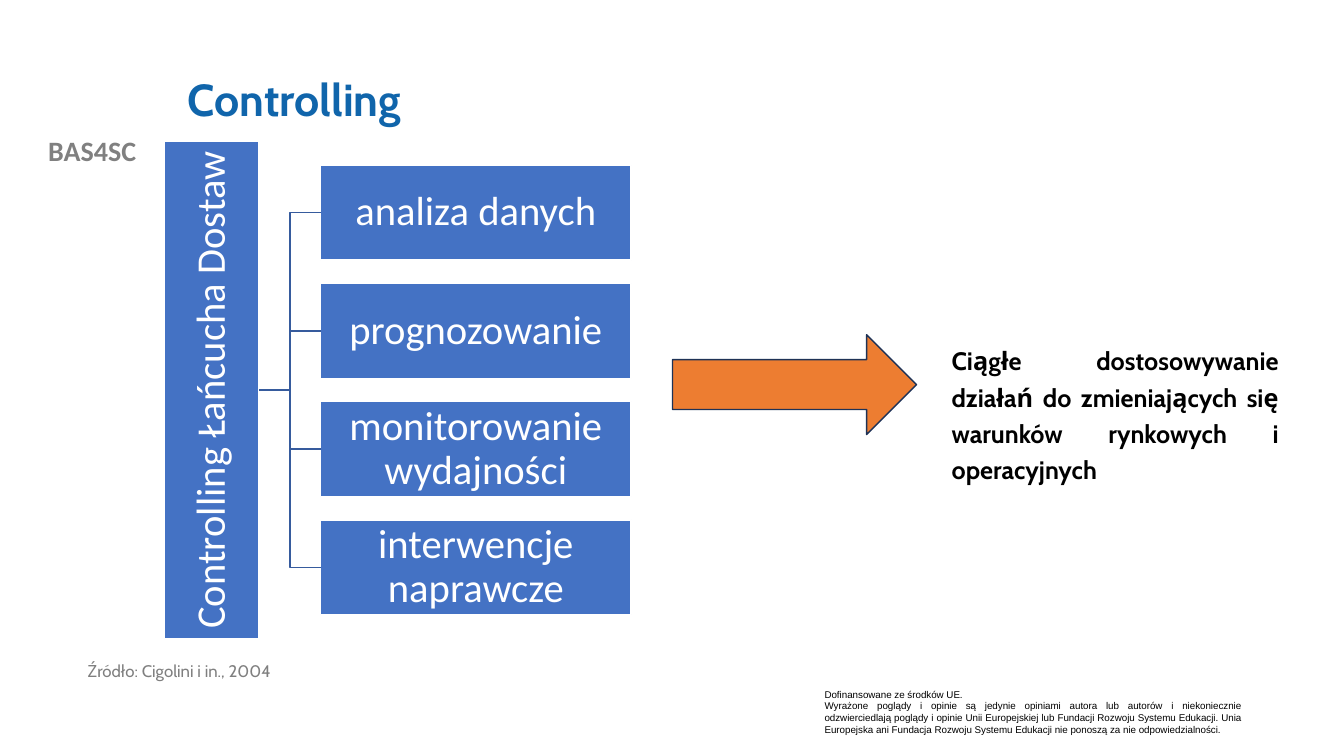
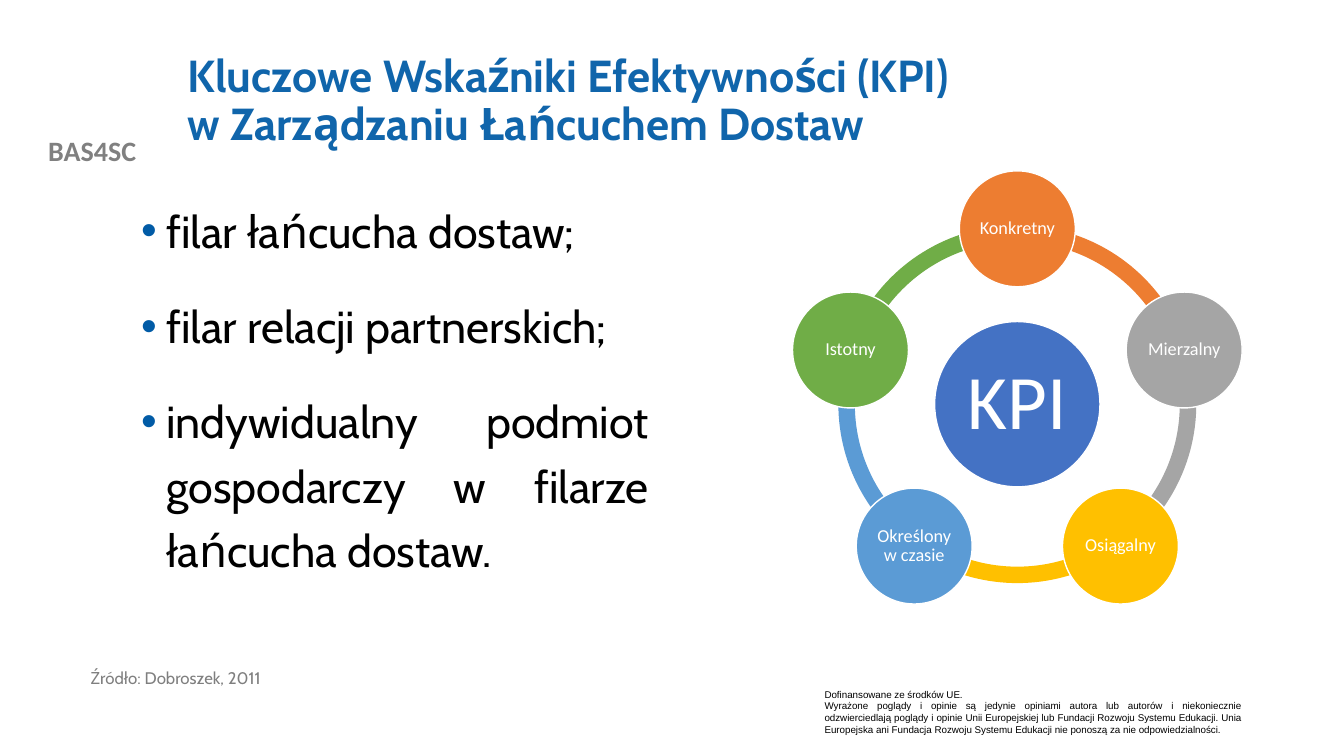
from dataclasses import dataclass
from math import cos, radians, sin

from lxml.etree import SubElement as Sub
from pptx import Presentation
from pptx.dml.color import RGBColor as RGB
from pptx.enum.shapes import MSO_CONNECTOR as Link, MSO_SHAPE as Form
from pptx.enum.text import MSO_ANCHOR as Anchor, MSO_AUTO_SIZE as Fit, PP_ALIGN as Align
from pptx.oxml.ns import qn
from pptx.util import Inches, Pt


@dataclass(frozen=True)
class Theme:
    # Colours
    title: str = "1065AB"
    dot: str = "015BA6"
    text: str = "000000"
    white: str = "FFFFFF"
    gray: str = "808080"
    note: str = "7F7F7F"
    blue: str = "4472C4"
    link: str = "365B9D"
    edge: str = "1E3256"
    orange: str = "ED7D31"
    silver: str = "A5A5A5"
    gold: str = "FFC000"
    sky: str = "5B9BD5"
    green: str = "70AD47"
    # Fonts
    main: str = "Cabin"
    plain: str = "Calibri"
    legal: str = "Arial"
    # Type sizes
    head: int = 32
    box: int = 29
    hub: int = 55
    ball: int = 13
    tag: int = 20
    claim: int = 18
    cite: int = 12
    fine: int = 7


T = Theme()


def write(frame, lines, size, color, font=T.main, bold=False, align=Align.LEFT, pitch=0.9):
    """Fill a text frame, one paragraph a line; a line feed breaks within it."""
    frame.word_wrap = True
    frame.auto_size = Fit.NONE
    for i, line in enumerate(lines):
        para = frame.paragraphs[0] if i == 0 else frame.add_paragraph()
        para.alignment = align
        para.line_spacing = pitch
        para.space_before = Pt(0)
        for j, part in enumerate(line.split("\n")):
            if j:
                para.add_line_break()
            run = para.add_run()
            run.text = part
            run.font.name = font
            run.font.size = Pt(size)
            run.font.bold = bold
            run.font.color.rgb = RGB.from_string(color)


def draw(slide, form, place, fill, edge=None, text=None, size=T.box):
    """Add a filled shape, with a centred label if there is one."""
    shape = slide.shapes.add_shape(form, *map(Inches, place))
    shape.shadow.inherit = False
    shape.fill.solid()
    shape.fill.fore_color.rgb = RGB.from_string(fill)
    if edge:
        shape.line.color.rgb = RGB.from_string(edge)
        shape.line.width = Pt(1)
    else:
        shape.line.fill.background()
    if text:
        frame = shape.text_frame
        frame.vertical_anchor = Anchor.MIDDLE
        frame.margin_left = frame.margin_right = Inches(0.02)
        frame.margin_top = frame.margin_bottom = Inches(0.02)
        write(frame, [text], size, T.white, T.plain, align=Align.CENTER)
    return shape


deck = Presentation()
deck.slide_width, deck.slide_height = Inches(13.33), Inches(7.5)

# Shared layout: title place
base = deck.slide_layouts[1]
head = base.placeholders[0]
head.left, head.top, head.width, head.height = map(Inches, (1.76, 0.4, 10.66, 1.22))
head.text_frame.vertical_anchor = Anchor.MIDDLE

# Slides with their titles
slides = []
for name in (
    "Controlling",
    "Kluczowe Wskaźniki Efektywności (KPI)\nw Zarządzaniu Łańcuchem Dostaw",
):
    slide = deck.slides.add_slide(base)
    write(slide.shapes.title.text_frame, [name], T.head, T.title, bold=True)
    slides.append(slide)
first, second = slides

# Shared layout: project tag and funding note
tag = first.shapes.add_textbox(*map(Inches, (0, 1.28, 1.83, 0.44)))
write(tag.text_frame, ["BAS4SC"], T.tag, T.gray, T.plain, True, Align.CENTER, 1.0)
fund = first.shapes.add_textbox(*map(Inches, (8.08, 6.78, 4.33, 0.57)))
write(fund.text_frame, [
    "Dofinansowane ze środków UE.",
    "Wyrażone poglądy i opinie są jedynie opiniami autora lub autorów i niekoniecznie "
    "odzwierciedlają poglądy i opinie Unii Europejskiej lub Fundacji Rozwoju Systemu "
    "Edukacji. Unia Europejska ani Fundacja Rozwoju Systemu Edukacji nie ponoszą za nie "
    "odpowiedzialności.",
], T.fine, T.text, T.legal, align=Align.JUSTIFY, pitch=1.0)
for box in (tag, fund):
    base.shapes.element.append(box.element)

# Slide 1: source line
body = first.placeholders[1]
body.left, body.top, body.width, body.height = map(Inches, (0.77, 6.53, 5.01, 0.52))
props = body.text_frame.paragraphs[0]._p.get_or_add_pPr()
props.set("marL", "0")
props.set("indent", "0")
Sub(props, qn("a:buNone"))
write(body.text_frame, ["Źródło: Cigolini i in., 2004"], T.cite, T.note)

# Slide 1: tree of four tasks
root = draw(first, Form.RECTANGLE, (1.63, 1.4, 0.94, 4.94), T.blue, T.white,
            "Controlling Łańcucha Dostaw")
root.text_frame._txBody.bodyPr.set("vert", "vert270")
tasks = ("analiza danych", "prognozowanie", "monitorowanie wydajności", "interwencje naprawcze")
for i, task in enumerate(tasks):
    leaf = draw(first, Form.RECTANGLE, (3.18, 1.64 + 1.173 * i, 3.08, 0.94),
                T.blue, T.white, task)
    link = first.shapes.add_connector(Link.ELBOW, 0, 0, 0, 0)
    link.begin_connect(root, 3)
    link.end_connect(leaf, 1)
    link.line.color.rgb = RGB.from_string(T.link)
    link.line.width = Pt(1)
    Sub(link._element.spPr, qn("a:effectLst"))

# Slide 1: arrow and outcome
draw(first, Form.RIGHT_ARROW, (6.67, 3.32, 2.42, 0.99), T.orange, T.edge)
claim = first.shapes.add_textbox(*map(Inches, (9.34, 3.32, 3.44, 1.53)))
write(claim.text_frame, [
    "Ciągłe dostosowywanie działań do zmieniających się warunków rynkowych i operacyjnych",
], T.claim, T.text, bold=True, align=Align.JUSTIFY, pitch=1.2)

# Slide 2: bulleted list
body = second.placeholders[1]
body.left, body.top, body.width, body.height = map(Inches, (1.3, 1.86, 5.24, 4.76))
write(body.text_frame, [
    "filar łańcucha dostaw;",
    "filar relacji partnerskich;",
    "indywidualny podmiot gospodarczy w filarze łańcucha dostaw.",
], T.head, T.text, align=Align.JUSTIFY, pitch=1.2)
for i, para in enumerate(body.text_frame.paragraphs):
    props = para._p.get_or_add_pPr()
    props.set("marL", str(Inches(0.25)))
    props.set("indent", str(-Inches(0.25)))
    Sub(Sub(props, qn("a:buClr")), qn("a:srgbClr")).set("val", T.dot)
    Sub(props, qn("a:buFont")).set("typeface", T.legal)
    Sub(props, qn("a:buChar")).set("char", "•")
    if i:
        para.space_before = Pt(22)

# Slide 2: source line
cite = second.shapes.add_textbox(*map(Inches, (0.8, 6.6, 5.01, 0.52)))
write(cite.text_frame, ["Źródło: Dobroszek, 2011"], T.cite, T.note)

# Slide 2: ring of arcs, each running clockwise from its ball
traits = (
    ("Konkretny", T.orange),
    ("Mierzalny", T.silver),
    ("Osiągalny", T.gold),
    ("Określony w czasie", T.sky),
    ("Istotny", T.green),
)
mid_x, mid_y, orbit, ring, ball, hub = 10.09, 4.01, 1.74, 3.55, 1.15, 1.64
step = 360 / len(traits)
unit = 0.6  # one degree in arc adjustment units
for i, (name, color) in enumerate(traits):
    start = 270 + step * i
    arc = draw(second, Form.BLOCK_ARC,
               (mid_x - ring / 2, mid_y - ring / 2, ring, ring), color)
    arc.adjustments[0] = start % 360 * unit
    arc.adjustments[1] = (start + step) % 360 * unit
    arc.adjustments[2] = 0.046

# Slide 2: hub and balls
draw(second, Form.OVAL, (mid_x - hub / 2, mid_y - hub / 2, hub, hub),
     T.blue, T.white, "KPI", T.hub)
for i, (name, color) in enumerate(traits):
    turn = radians(270 + step * i)
    left = mid_x + orbit * cos(turn) - ball / 2
    top = mid_y + orbit * sin(turn) - ball / 2
    draw(second, Form.OVAL, (left, top, ball, ball), color, T.white, name, T.ball)

deck.save("out.pptx")
